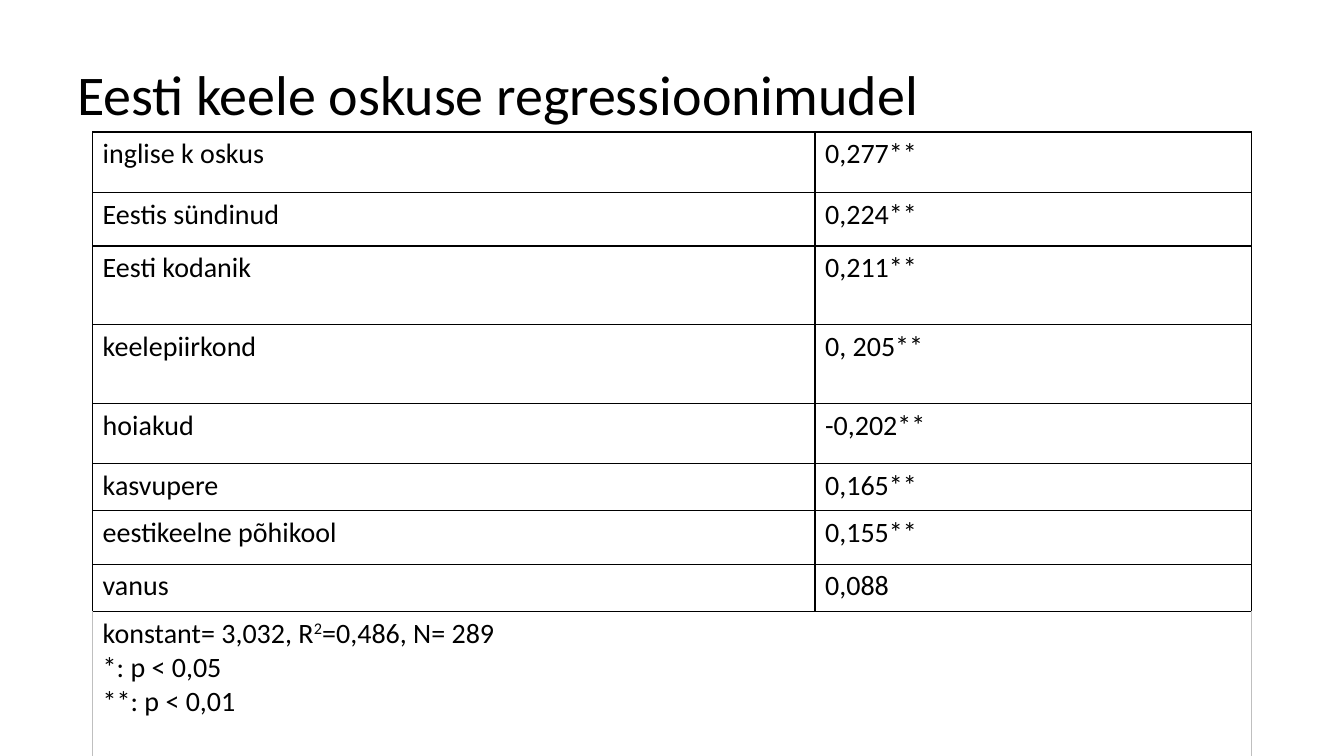
from lxml import etree
from pptx import Presentation
from pptx.dml.color import RGBColor
from pptx.enum.text import MSO_ANCHOR, PP_ALIGN
from pptx.oxml.ns import qn
from pptx.util import Pt

MIDDLE = MSO_ANCHOR.MIDDLE
JUSTIFY = PP_ALIGN.JUSTIFY
BLACK = RGBColor(0, 0, 0)
GREY = RGBColor(0xBF, 0xBF, 0xBF)
WHITE = RGBColor(0xFF, 0xFF, 0xFF)
FONT = "Calibri"

COLUMN_WIDTHS = (516, 312)
# Label, coefficient, row height in points
MODEL_ROWS = (
    ("inglise k oskus", "0,277**", 43.2),
    ("Eestis sündinud", "0,224**", 38.2),
    ("Eesti kodanik", "0,211**", 56.2),
    ("keelepiirkond", "0, 205**", 56.2),
    ("hoiakud", "-0,202**", 43.2),
    ("kasvupere", "0,165**", 33.6),
    ("eestikeelne põhikool", "0,155**", 38.2),
    ("vanus", "0,088", 33.6),
)
NOTE_HEIGHT = 110
# Each note line is a list of (text, is superscript)
NOTE_LINES = (
    (("konstant= 3,032, R", False), ("2", True), ("=0,486, N= 289", False)),
    (("*: p < 0,05", False),),
    (("**: p < 0,01", False),),
)


def style_paragraph(paragraph, size):
    paragraph.font.name = FONT
    paragraph.font.size = Pt(size)
    paragraph.font.color.rgb = BLACK


def set_borders(cell, sides, color, width):
    """Draw the given sides; they must come before the cell's fill."""
    properties = cell._tc.get_or_add_tcPr()
    for side in sides:
        line = etree.SubElement(properties, qn(f"a:ln{side}"), w=str(Pt(width)))
        fill = etree.SubElement(line, qn("a:solidFill"))
        etree.SubElement(fill, qn("a:srgbClr"), val=str(color))


def add_title(page, left, top, width, height):
    box = page.shapes.add_textbox(Pt(left), Pt(top), Pt(width), Pt(height))
    frame = box.text_frame
    frame.word_wrap = True
    frame.vertical_anchor = MIDDLE
    paragraph = frame.paragraphs[0]
    paragraph.text = "Eesti keele oskuse regressioonimudel"
    paragraph.alignment = JUSTIFY
    style_paragraph(paragraph, 40)


def fill_note(cell):
    frame = cell.text_frame
    for index, spans in enumerate(NOTE_LINES):
        paragraph = frame.add_paragraph() if index else frame.paragraphs[0]
        style_paragraph(paragraph, 20)
        for text, superscript in spans:
            span = paragraph.add_run()
            span.text = text
            if superscript:
                span.font._element.set("baseline", "30000")


def add_model_table(page, left, top):
    heights = [row[2] for row in MODEL_ROWS] + [NOTE_HEIGHT]
    table = page.shapes.add_table(
        len(heights), len(COLUMN_WIDTHS), Pt(left), Pt(top),
        Pt(sum(COLUMN_WIDTHS)), Pt(sum(heights))).table
    table.first_row = table.horz_banding = False
    for column, width in zip(table.columns, COLUMN_WIDTHS):
        column.width = Pt(width)
    for row, height in zip(table.rows, heights):
        row.height = Pt(height)

    # Coefficients
    for row, (label, value, _) in zip(table.rows, MODEL_ROWS):
        for cell, text in zip(row.cells, (label, value)):
            cell.text = text
            style_paragraph(cell.text_frame.paragraphs[0], 20)
            set_borders(cell, "LRTB", BLACK, 1)

    # Note across both columns
    note_row = len(MODEL_ROWS)
    note, note_end = table.cell(note_row, 0), table.cell(note_row, 1)
    note.merge(note_end)
    fill_note(note)
    for cell in (note, note_end):
        set_borders(cell, "LR", GREY, 0.5)
        set_borders(cell, "T", BLACK, 1)

    for cell in table.iter_cells():
        cell.fill.solid()
        cell.fill.fore_color.rgb = WHITE


def main():
    deck = Presentation()
    deck.slide_width, deck.slide_height = Pt(960), Pt(540)
    page = deck.slides.add_slide(deck.slide_layouts[6])
    add_title(page, 48, 21.6, 864, 90)
    add_model_table(page, 66.2, 94.3)
    deck.save("out.pptx")


if __name__ == "__main__":
    main()
